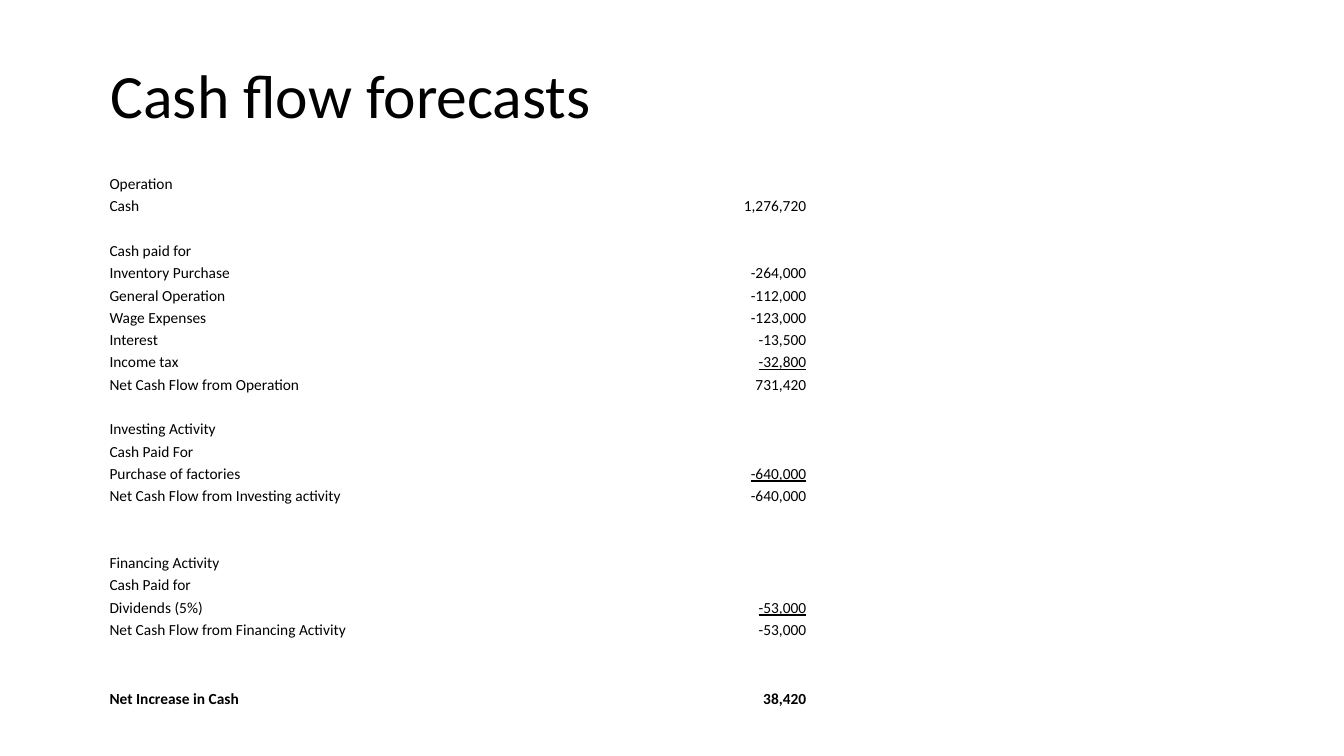
from lxml.etree import SubElement
from pptx import Presentation
from pptx.dml.color import RGBColor
from pptx.enum.text import MSO_VERTICAL_ANCHOR as Anchor, PP_PARAGRAPH_ALIGNMENT as Align
from pptx.oxml.ns import qn
from pptx.util import Cm, Pt

BLACK = RGBColor(0x00, 0x00, 0x00)

# Label, amount, format of the amount
CASH_FLOWS = [
    ("Operation", "", {}),
    ("Cash", "1,276,720", {}),
    ("", "", {}),
    ("Cash paid for", "", {}),
    ("Inventory Purchase", "-264,000", {}),
    ("General Operation", "-112,000", {}),
    ("Wage Expenses", "-123,000", {}),
    ("Interest", "-13,500", {}),
    ("Income tax", "-32,800", {"underline": True}),
    ("Net Cash Flow from Operation", "731,420", {}),
    ("", "", {}),
    ("Investing Activity", "", {}),
    ("Cash Paid For", "", {}),
    ("Purchase of factories", "-640,000", {"underline": True}),
    ("Net Cash Flow from Investing activity", "-640,000", {}),
    ("", "", {}),
    ("", "", {}),
    ("Financing Activity", "", {}),
    ("Cash Paid for", "", {}),
    ("Dividends (5%)", "-53,000", {"underline": True}),
    ("Net Cash Flow from Financing Activity", "-53,000", {}),
    ("", "", {}),
    ("", "", {}),
    ("Net Increase in Cash", "38,420", {"bold": True}),
]
COLUMN_WIDTHS = [8.69, 2.97, 2.97, 2.97]
LAST_ROW_HEIGHT = 0.61


class ForecastPage:
    """Holds the text style and the slide being filled."""

    def __init__(self, page, font="Calibri", color=BLACK):
        self.page, self.font, self.color = page, font, color

    def add_text(self, para, text, size, **formats):
        if not text:
            # An empty cell keeps its row low only with a small end mark
            SubElement(para._p, qn("a:endParaRPr"), sz=str(size * 100))
            return
        span = para.add_run()
        span.text = text
        span.font.color.rgb = self.color
        for name, value in {"name": self.font, "size": Pt(size), **formats}.items():
            setattr(span.font, name, value)

    def title(self, text, left, top, width, height):
        box = self.page.shapes.add_textbox(Cm(left), Cm(top), Cm(width), Cm(height))
        frame = box.text_frame
        frame.word_wrap = True
        frame.vertical_anchor = Anchor.MIDDLE
        frame.paragraphs[0].line_spacing = 0.9
        self.add_text(frame.paragraphs[0], text, 44)

    def cell(self, cell, text, align, **formats):
        layout = {"margin_left": Cm(0.02), "margin_right": Cm(0.02), "margin_top": Cm(0.02),
                  "margin_bottom": 0, "vertical_anchor": Anchor.BOTTOM}
        for name, value in layout.items():
            setattr(cell, name, value)
        cell.fill.background()
        para = cell.text_frame.paragraphs[0]
        para.alignment = align
        self.add_text(para, text, 11, **formats)

    def cash_flow_table(self, rows, left, top, height):
        frame = self.page.shapes.add_table(len(rows), len(COLUMN_WIDTHS), Cm(left), Cm(top),
                                           Cm(sum(COLUMN_WIDTHS)), Cm(height))
        table = frame.table
        table.first_row = table.horz_banding = False
        for column, width in zip(table.columns, COLUMN_WIDTHS):
            column.width = Cm(width)
        row_height = (height - LAST_ROW_HEIGHT) / (len(rows) - 1)
        for index, (label, amount, formats) in enumerate(rows):
            table.rows[index].height = Cm(row_height)
            label_formats = {"bold": formats.get("bold", False)}
            self.cell(table.cell(index, 0), label, Align.LEFT, **label_formats)
            for middle in (1, 2):
                self.cell(table.cell(index, middle), "", Align.LEFT)
            self.cell(table.cell(index, 3), amount, Align.RIGHT, **formats)
            # Net cash flow labels run over two columns
            if label.startswith("Net Cash Flow"):
                table.cell(index, 0).merge(table.cell(index, 1))
        table.rows[len(rows) - 1].height = Cm(LAST_ROW_HEIGHT)


def main():
    deck = Presentation()
    deck.slide_width, deck.slide_height = Cm(33.87), Cm(19.05)
    forecast = ForecastPage(deck.slides.add_slide(deck.slide_layouts[6]))

    # Heading
    forecast.title("Cash flow forecasts", 2.54, 0.64, 26.92, 3.68)

    # Cash flow statement
    forecast.cash_flow_table(CASH_FLOWS, 2.74, 4.32, 13.54)

    deck.save("out.pptx")


if __name__ == "__main__":
    main()
